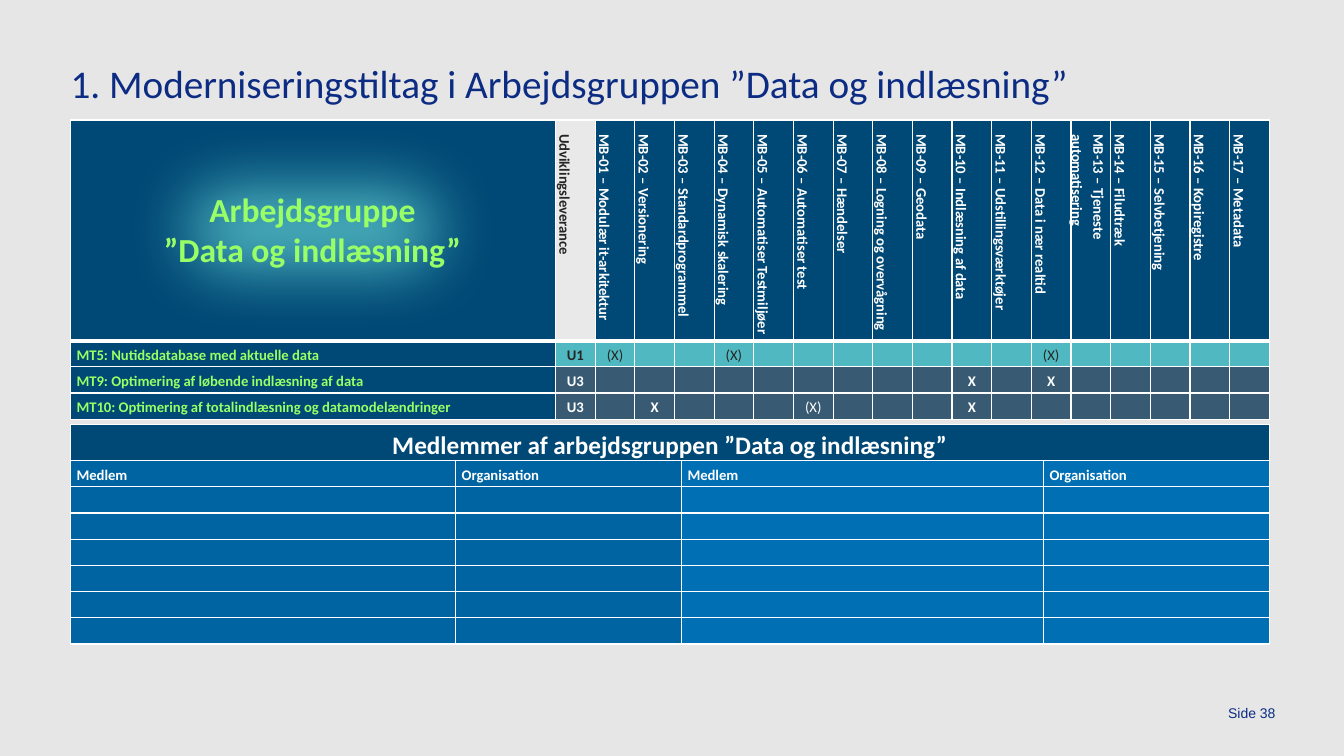
from dataclasses import dataclass, field

import pptx
import pptx.dml.color
import pptx.enum.shapes
import pptx.enum.text
import pptx.oxml
import pptx.oxml.ns
import pptx.slide
import pptx.table
import pptx.text.text
import pptx.util

Inches = pptx.util.Inches
Pt = pptx.util.Pt
RGBColor = pptx.dml.color.RGBColor
ALIGN = pptx.enum.text.PP_ALIGN
ANCHOR = pptx.enum.text.MSO_ANCHOR

BACKGROUND = RGBColor(0xE7, 0xE6, 0xE6)
TITLE_BLUE = RGBColor(0x0C, 0x2C, 0x83)
NAVY = RGBColor(0x00, 0x48, 0x75)
TEAL = RGBColor(0x50, 0xB8, 0xC1)
SLATE = RGBColor(0x38, 0x5B, 0x73)
PALE = RGBColor(0xE9, 0xE9, 0xE9)
LIME = RGBColor(0x99, 0xFF, 0x66)
DARK = RGBColor(0x25, 0x25, 0x25)
WHITE = RGBColor(0xFF, 0xFF, 0xFF)
BLUE = RGBColor(0x00, 0x64, 0xA2)
BRIGHT_BLUE = RGBColor(0x00, 0x6F, 0xB4)

LEFT, WIDTH, ROW_HEIGHT = 0.7, 11.89, 0.26
NAME_WIDTH, HEADER_HEIGHT = 4.81, 2.19


@dataclass
class Initiative:
    name: str
    delivery: str
    fill: RGBColor
    color: RGBColor
    marks: dict[int, str] = field(default_factory=dict)  # MB number -> mark


@dataclass
class CellStyle:
    fill: RGBColor
    color: RGBColor = WHITE
    size: float = 10.5
    bold: bool = True
    align: ALIGN = ALIGN.LEFT
    vertical: bool = False
    top: float = 1
    bottom: float = 1


MB_NAMES = [
    "Modulær it-arkitektur", "Versionering", "Standardprogrammel",
    "Dynamisk skalering", "Automatiser Testmiljøer", "Automatiser test",
    "Hændelser", "Logning og overvågning", "Geodata", "Indlæsning af data",
    "Udstillingsværktøjer", "Data i nær realtid", "Tjeneste automatisering",
    "Filudtræk", "Selvbetjening", "Kopiregistre", "Metadata",
]
INITIATIVES = [
    Initiative("MT5: Nutidsdatabase med aktuelle data", "U1", TEAL, DARK,
               {1: "(X)", 4: "(X)", 12: "(X)"}),
    Initiative("MT9: Optimering af løbende indlæsning af data", "U3", SLATE, WHITE,
               {10: "X", 12: "X"}),
    Initiative("MT10: Optimering af totalindlæsning og datamodelændringer", "U3",
               SLATE, WHITE, {2: "X", 6: "(X)", 10: "X"}),
]
MEMBER_COLUMNS = [("Medlem", 3.82, BLUE), ("Organisation", 2.24, BLUE),
                  ("Medlem", 3.59, BRIGHT_BLUE), ("Organisation", 2.24, BRIGHT_BLUE)]
MEMBER_ROWS = 8


def set_font(p: pptx.text.text._Paragraph, size: float, color: RGBColor,
             bold: bool = False, name: str = "Calibri") -> None:
    p.font.name, p.font.size, p.font.bold = name, Pt(size), bold
    p.font.color.rgb = color


def add_text(slide: pptx.slide.Slide, box: tuple[float, float, float, float],
             text: str, anchor: ANCHOR) -> pptx.text.text._Paragraph:
    tf = slide.shapes.add_textbox(*map(Inches, box)).text_frame
    tf.word_wrap, tf.vertical_anchor = True, anchor
    tf.margin_left = tf.margin_right = tf.margin_top = tf.margin_bottom = 0
    p = tf.paragraphs[0]
    p.text = text
    return p


def fill_cell(cell: pptx.table._Cell, text: str, style: CellStyle) -> None:
    cell.fill.solid()
    cell.fill.fore_color.rgb = style.fill
    cell.vertical_anchor = ANCHOR.MIDDLE
    cell.margin_left = cell.margin_right = Inches(0.06)
    cell.margin_top = cell.margin_bottom = 0
    p = cell.text_frame.paragraphs[0]
    p.text = text
    p.alignment, p.line_spacing, p.space_before = style.align, 1.2, Pt(4)
    set_font(p, style.size, style.color, style.bold)
    if not text:  # keeps empty rows low
        end = pptx.oxml.parse_xml(
            f'<a:endParaRPr {pptx.oxml.ns.nsdecls("a")} sz="{int(style.size * 100)}"/>')
        p._p.append(end)
    tc_pr = cell._tc.get_or_add_tcPr()
    if style.vertical:
        tc_pr.set("vert", "vert")
        p._p.get_or_add_pPr().set("marL", str(Inches(0.08)))
        p._p.get_or_add_pPr().set("indent", "0")
    # Borders come before the fill
    widths = {"lnL": 1, "lnR": 1, "lnT": style.top, "lnB": style.bottom}
    for i, (side, width) in enumerate(widths.items()):
        tc_pr.insert(i, pptx.oxml.parse_xml(
            f'<a:{side} {pptx.oxml.ns.nsdecls("a")} w="{Pt(width)}"><a:solidFill>'
            f'<a:srgbClr val="{WHITE}"/></a:solidFill></a:{side}>'))


def add_table(slide: pptx.slide.Slide, top: float, widths: list[float],
              heights: list[float]) -> pptx.table.Table:
    table = slide.shapes.add_table(
        len(heights), len(widths), Inches(LEFT), Inches(top),
        Inches(WIDTH), Inches(sum(heights))).table
    table.first_row = table.horz_banding = False
    for column, width in zip(table.columns, widths):
        column.width = Inches(width)
    for row, height in zip(table.rows, heights):
        row.height = Inches(height)
    return table


def add_initiatives(slide: pptx.slide.Slide) -> None:
    count = len(MB_NAMES) + 1
    narrow = (WIDTH - NAME_WIDTH) / count
    table = add_table(slide, 1.19, [NAME_WIDTH] + [narrow] * count,
                      [HEADER_HEIGHT] + [ROW_HEIGHT] * len(INITIATIVES))
    # Header with vertical labels
    fill_cell(table.cell(0, 0), "", CellStyle(NAVY, bottom=3))
    fill_cell(table.cell(0, 1), "Udviklingsleverance",
              CellStyle(PALE, DARK, vertical=True, bottom=3))
    for n, name in enumerate(MB_NAMES, 1):
        fill_cell(table.cell(0, n + 1), f"MB-{n:02} – {name}",
                  CellStyle(NAVY, vertical=True, bottom=3))
    # One row per initiative
    for row, item in enumerate(INITIATIVES, 1):
        top = 3 if row == 1 else 1
        fill_cell(table.cell(row, 0), item.name, CellStyle(NAVY, LIME, top=top))
        for n in range(count):
            mark = item.marks.get(n, "") if n else item.delivery
            fill_cell(table.cell(row, n + 1), mark,
                      CellStyle(item.fill, item.color, bold=not mark.startswith("("),
                                align=ALIGN.CENTER, top=top))


def add_members(slide: pptx.slide.Slide) -> None:
    table = add_table(slide, 4.21, [width for _, width, _ in MEMBER_COLUMNS],
                      [ROW_HEIGHT] * MEMBER_ROWS)
    table.cell(0, 0).merge(table.cell(0, len(MEMBER_COLUMNS) - 1))
    fill_cell(table.cell(0, 0), "Medlemmer af arbejdsgruppen ”Data og indlæsning”",
              CellStyle(NAVY, size=18, align=ALIGN.CENTER))
    for col, (label, _, fill) in enumerate(MEMBER_COLUMNS):
        for row in range(1, MEMBER_ROWS):
            fill_cell(table.cell(row, col), label if row == 1 else "", CellStyle(fill))


def add_group_badge(slide: pptx.slide.Slide) -> None:
    sp = slide.shapes.add_shape(pptx.enum.shapes.MSO_SHAPE.ROUNDED_RECTANGLE,
                                *map(Inches, (1.18, 1.19, 3.84, 2.16)))
    sp.shadow.inherit = False
    sp.fill.solid()
    sp.fill.fore_color.rgb = TEAL
    sp.line.fill.background()
    effects = sp._element.spPr.find(pptx.oxml.ns.qn("a:effectLst"))
    effects.append(pptx.oxml.parse_xml(
        f'<a:softEdge {pptx.oxml.ns.nsdecls("a")} rad="{Pt(50)}"/>'))
    sp.text_frame.word_wrap = True
    sp.text_frame.vertical_anchor = ANCHOR.MIDDLE
    p = sp.text_frame.paragraphs[0]
    p.text = "Arbejdsgruppe\v”Data og indlæsning”"
    p.alignment = ALIGN.CENTER
    set_font(p, 24, LIME, True)


def main() -> None:
    prs = pptx.Presentation()
    prs.slide_width, prs.slide_height = Inches(13.33), Inches(7.5)
    slide = prs.slides.add_slide(prs.slide_layouts[6])
    slide.background.fill.solid()
    slide.background.fill.fore_color.rgb = BACKGROUND
    # Title and page number
    p = add_text(slide, (LEFT, 0.37, 12.01, 0.74),
                 "1. Moderniseringstiltag i Arbejdsgruppen ”Data og indlæsning”", ANCHOR.TOP)
    p.line_spacing = Pt(49.1)
    set_font(p, 28, TITLE_BLUE)
    p = add_text(slide, (11.78, 6.78, 0.87, 0.38), "Side 38", ANCHOR.BOTTOM)
    p.alignment = ALIGN.RIGHT
    set_font(p, 10, TITLE_BLUE, name="Arial")
    # Tables, then the badge on top
    add_initiatives(slide)
    add_members(slide)
    add_group_badge(slide)
    prs.save("out.pptx")


if __name__ == "__main__":
    main()
